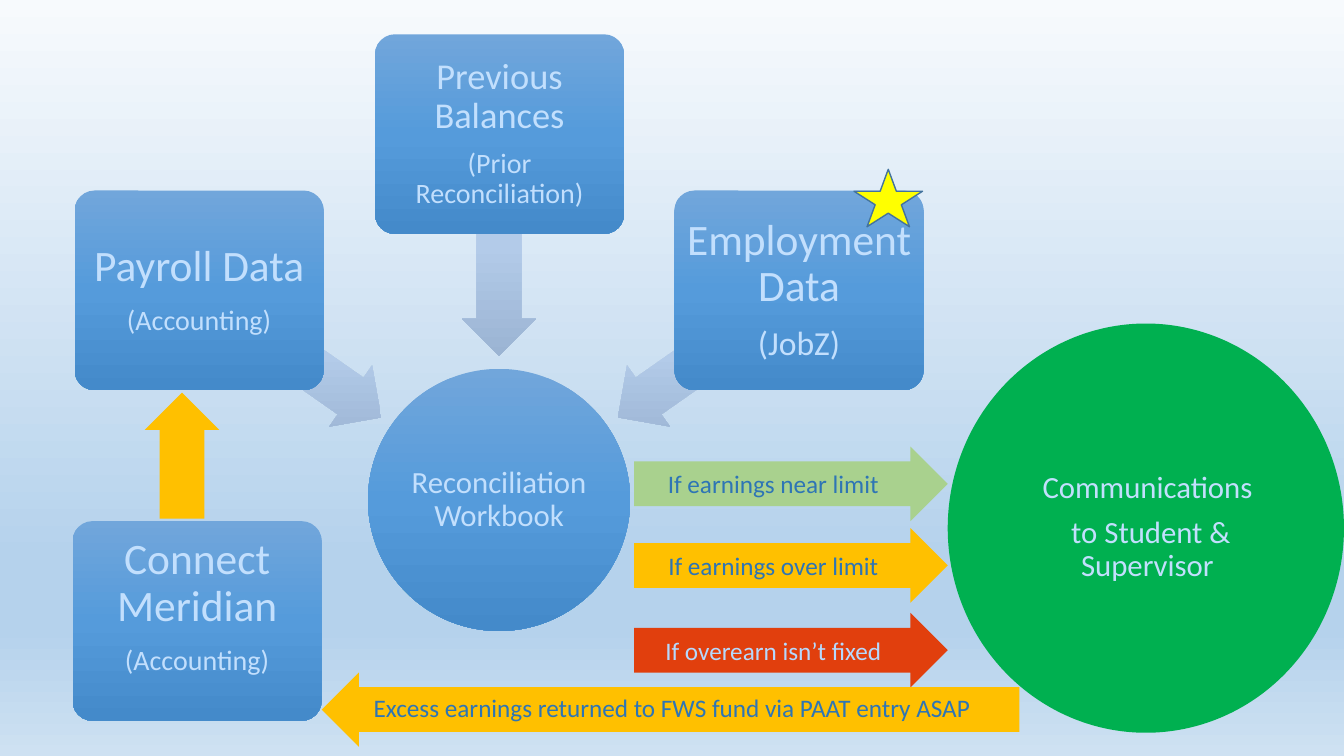
"""Build the reconciliation workflow slide."""
from dataclasses import dataclass
from typing import Optional, Union

from lxml import etree
from pptx import Presentation
from pptx.dml.color import RGBColor
from pptx.enum import shapes, text
from pptx.oxml.ns import qn
from pptx.util import Emu, Pt

PX = 9144
Stops = tuple[tuple[int, RGBColor], ...]
Kind = shapes.MSO_SHAPE

PALE = RGBColor(0xC2, 0xDF, 0xFD)
SKY = RGBColor(0xB6, 0xD9, 0xFD)
BLUE = RGBColor(0x2E, 0x75, 0xB5)
OUTLINE = RGBColor(0x43, 0x73, 0x9E)
GREEN = RGBColor(0x00, 0xB0, 0x50)
LIME = RGBColor(0xA9, 0xD1, 0x8E)
AMBER = RGBColor(0xFF, 0xC0, 0x00)
RED = RGBColor(0xE1, 0x3F, 0x0D)
YELLOW = RGBColor(0xFF, 0xFF, 0x00)
MIST = RGBColor(0xB5, 0xD2, 0xEC)

BACKDROP: Stops = ((0, RGBColor(0xF7, 0xFA, 0xFD)), (74, MIST), (83, MIST),
                   (100, RGBColor(0xCE, 0xE1, 0xF2)))
NODE_FILL: Stops = ((0, RGBColor(0x71, 0xA6, 0xDB)), (50, RGBColor(0x55, 0x9B, 0xDB)),
                    (100, RGBColor(0x44, 0x8A, 0xCA)))
FLOW_FILL: Stops = ((0, RGBColor(0xC0, 0xD2, 0xEB)), (50, RGBColor(0xB3, 0xCB, 0xE9)),
                    (100, RGBColor(0x9B, 0xB4, 0xD3)))

NODE_SIZE = (247, 198)
ARROW_HEIGHT = 74


@dataclass(frozen=True)
class Figure:
    """A preset shape with its fill."""
    kind: Kind
    at: tuple[int, int, int, int]
    fill: Union[RGBColor, Stops]
    adjustments: tuple[float, ...] = ()
    rotation: int = 0
    line: Optional[RGBColor] = None


@dataclass(frozen=True)
class Caption:
    """Centred paragraphs, each with a size in points."""
    at: tuple[int, int, int, int]
    lines: tuple[tuple[str, int], ...]
    color: RGBColor = PALE
    inset: Optional[int] = None


def arrow(left: int, top: int, width: int, fill: Union[RGBColor, Stops],
          rotation: int = 0) -> Figure:
    """Describe a block arrow that points left before rotation."""
    return Figure(Kind.LEFT_ARROW, (left, top, width, ARROW_HEIGHT), fill, (0.6, 0.5), rotation)


def node(left: int, top: int, inset: int, *lines: tuple[str, int], lift: int = 0) -> list:
    """Describe a rounded data box and its caption."""
    width, height = NODE_SIZE
    return [Figure(Kind.ROUNDED_RECTANGLE, (left, top, width, height), NODE_FILL, (0.1,)),
            Caption((left + 6, top + 6 - lift, width - 12, height - 12), lines, inset=inset)]


def outcome(top: int, fill: RGBColor, label: str, color: RGBColor) -> list:
    """Describe a right-pointing arrow and its label."""
    return [arrow(629, top, 311, fill, 180),
            Caption((629, top + 17, 276, 40), ((label, 18),), color)]


def paint_gradient(fill, element, stops: Stops) -> None:
    """Fill with a top-to-bottom gradient."""
    fill.gradient()
    fill.gradient_angle = 270
    gradient = next(element.iter(qn("a:gradFill")))
    gradient.set("rotWithShape", "0")
    stop_list = gradient.find(qn("a:gsLst"))
    for stop in list(stop_list):
        stop_list.remove(stop)
    for percent, color in stops:
        stop = etree.SubElement(stop_list, qn("a:gs"), pos=str(percent * 1000))
        etree.SubElement(stop, qn("a:srgbClr"), val=str(color))


def draw_figure(page, figure: Figure) -> None:
    """Draw one preset shape."""
    shape = page.shapes.add_shape(figure.kind, *(Emu(n * PX) for n in figure.at))
    shape.shadow.inherit = False
    shape.rotation = figure.rotation
    for index, value in enumerate(figure.adjustments):
        shape.adjustments[index] = value
    if isinstance(figure.fill, RGBColor):
        shape.fill.solid()
        shape.fill.fore_color.rgb = figure.fill
    else:
        paint_gradient(shape.fill, shape._element, figure.fill)
    if figure.line is None:
        shape.line.fill.background()
    else:
        shape.line.color.rgb = figure.line
        shape.line.width = Pt(1)


def draw_caption(page, caption: Caption) -> None:
    """Draw one text box."""
    box = page.shapes.add_textbox(*(Emu(n * PX) for n in caption.at))
    frame = box.text_frame
    settings = {"word_wrap": True}
    spaced = caption.inset is not None
    if spaced:
        settings["vertical_anchor"] = text.MSO_ANCHOR.MIDDLE
        for side in ("left", "top", "right", "bottom"):
            settings[f"margin_{side}"] = Emu(caption.inset * PX)
    else:
        settings["auto_size"] = text.MSO_AUTO_SIZE.SHAPE_TO_FIT_TEXT
    for name, value in settings.items():
        setattr(frame, name, value)
    for index, (words, size) in enumerate(caption.lines):
        para = frame.add_paragraph() if index else frame.paragraphs[0]
        para.alignment = text.PP_ALIGN.CENTER
        if spaced:
            para.line_spacing = 0.9
            para.space_after = Pt(round(size * 0.35))
        span = para.add_run()
        span.text = words
        for name, value in {"name": "Calibri", "size": Pt(size)}.items():
            setattr(span.font, name, value)
        span.font.color.rgb = caption.color


ITEMS = [
    Figure(Kind.OVAL, (365, 366, 260, 260), NODE_FILL),
    Caption((403, 404, 184, 184), (("Reconciliation Workbook", 22),), inset=2),
    arrow(178, 314, 220, FLOW_FILL, 215),
    *node(74, 189, 6, ("Payroll Data", 31), ("(Accounting)", 20)),
    arrow(385, 206, 220, FLOW_FILL, 270),
    *node(372, 34, 5, ("Previous Balances", 26), ("(Prior Reconciliation)", 20)),
    arrow(593, 314, 220, FLOW_FILL, 325),
    *node(669, 189, 6, ("Employment Data", 31), ("(JobZ)", 24)),
    Figure(Kind.OVAL, (940, 321, 393, 406), GREEN),
    Caption((999, 380, 278, 287), (("Communications", 22), (" to Student & Supervisor", 22)),
            inset=2),
    *outcome(443, LIME, "If earnings near limit", BLUE),
    *outcome(524, AMBER, "If earnings over limit", BLUE),
    *outcome(608, RED, "If overearn isn’t fixed", SKY),
    Figure(Kind.STAR_5_POINT, (847, 168, 68, 57), YELLOW, line=OUTLINE),
    *node(72, 517, 6, ("Connect Meridian", 31), ("(Accounting)", 20), lift=14),
    arrow(319, 667, 692, AMBER),
    Caption((349, 682, 635, 40),
            (("Excess earnings returned to FWS fund via PAAT entry ASAP", 18),), BLUE),
    arrow(118, 415, 125, AMBER, 90),
]


def main() -> None:
    """Build and save the deck."""
    deck = Presentation()
    deck.slide_width, deck.slide_height = Emu(1333 * PX), Emu(750 * PX)
    page = deck.slides.add_slide(deck.slide_layouts[6])
    paint_gradient(page.background.fill, page._element, BACKDROP)
    for item in ITEMS:
        if isinstance(item, Figure):
            draw_figure(page, item)
        else:
            draw_caption(page, item)
    deck.save("out.pptx")


if __name__ == "__main__":
    main()
